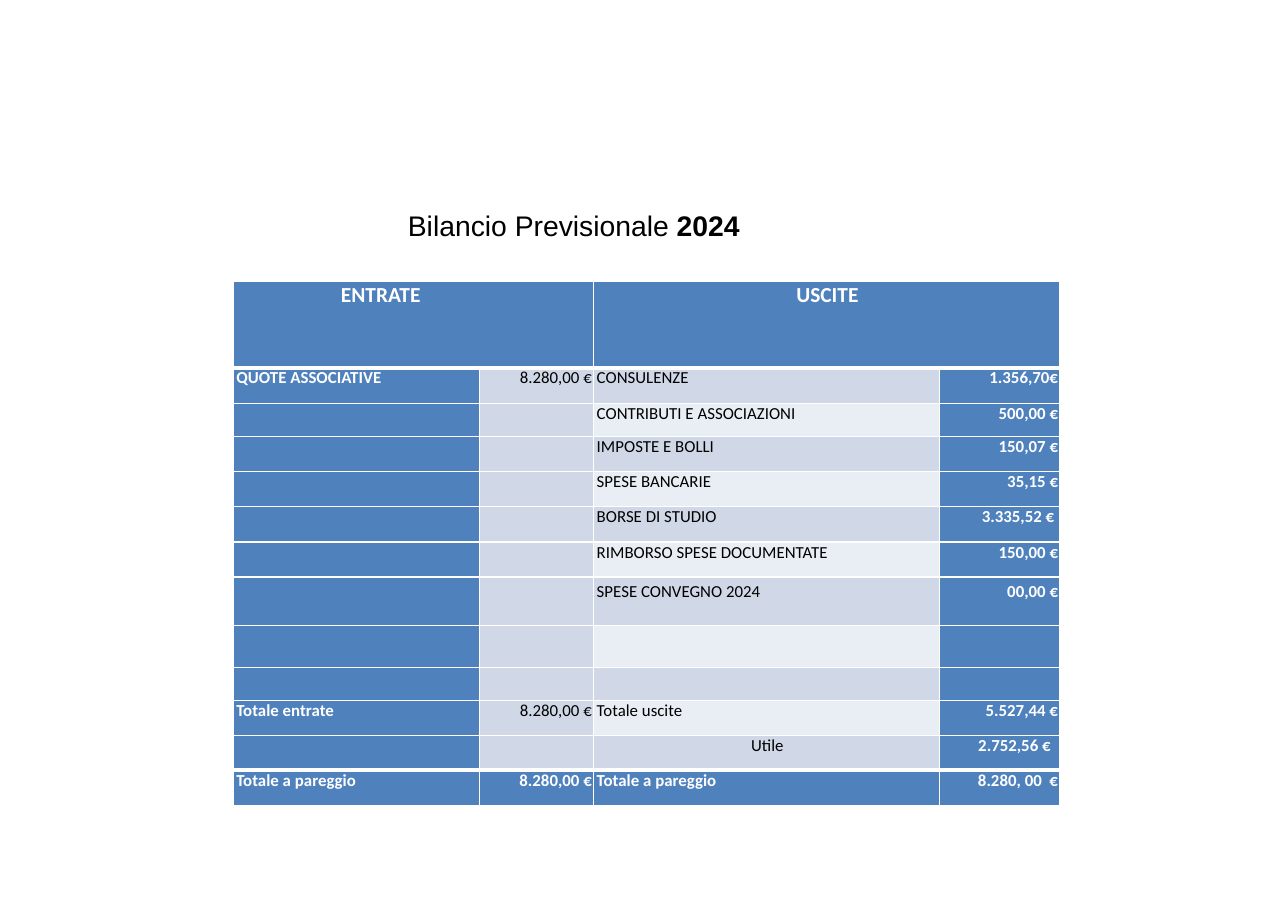
from lxml.etree import SubElement
from pptx import Presentation
from pptx.dml.color import RGBColor
from pptx.enum.text import MSO_ANCHOR, PP_ALIGN
from pptx.oxml.ns import qn
from pptx.util import Cm, Pt

BLUE, PALE, LIGHT, WHITE, BLACK = "4F81BD", "D0D8E8", "E9EDF4", "FFFFFF", "000000"


def write(para, text, size=11, font="Calibri", color=BLACK, bold=False, align=PP_ALIGN.LEFT):
    para.alignment = align
    span = para.add_run()
    span.text = text
    span.font.size = Pt(size)
    span.font.name = font
    span.font.bold = bold
    span.font.color.rgb = RGBColor.from_string(color)


def add_border(cell, side, width):
    line = SubElement(cell._tc.get_or_add_tcPr(), qn(f"a:ln{side}"), w=str(Pt(width)))
    fill = SubElement(line, qn("a:solidFill"))
    SubElement(fill, qn("a:srgbClr"), val=WHITE)


deck = Presentation()
deck.slide_width, deck.slide_height = Cm(29.7), Cm(20.99)
page = deck.slides.add_slide(deck.slide_layouts[5])

title = page.shapes.title
title.left, title.top, title.width, title.height = Cm(8.08), Cm(4.8), Cm(10.3), Cm(0.81)
frame = title.text_frame
frame.margin_left = frame.margin_right = frame.margin_top = frame.margin_bottom = 0
frame.vertical_anchor = MSO_ANCHOR.TOP
for text, bold in [("Bilancio Previsionale ", False), ("2024", True)]:
    write(frame.paragraphs[0], text, size=18.5, font="Arial", bold=bold, align=PP_ALIGN.CENTER)

rows = [
    ("ENTRATE", "", "USCITE", ""),
    ("QUOTE ASSOCIATIVE", "8.280,00 €", "CONSULENZE", "1.356,70€"),
    ("", "", "CONTRIBUTI E ASSOCIAZIONI", "500,00 €"),
    ("", "", "IMPOSTE E BOLLI", "150,07 €"),
    ("", "", "SPESE BANCARIE", "35,15 €"),
    ("", "", "BORSE DI STUDIO", "3.335,52 € "),
    ("", "", "RIMBORSO SPESE DOCUMENTATE", "150,00 €"),
    ("", "", "SPESE CONVEGNO 2024", "00,00 €"),
    ("", "", "", ""),
    ("", "", "", ""),
    ("Totale entrate", "8.280,00 €", "Totale uscite", "5.527,44 €"),
    ("", "", "Utile", "2.752,56 €"),
    ("Totale a pareggio", "8.280,00 €", "Totale a pareggio", "8.280, 00  €"),
]
widths = [5.69, 2.54, 7.98, 2.77]
heights = [2, 0.82, 0.77, 0.8, 0.81, 0.82, 0.81, 1.11, 0.97, 0.76, 0.81, 0.81, 0.81]
last = len(rows) - 1

holder = page.shapes.add_table(len(rows), len(widths), Cm(5.37), Cm(6.48),
                               Cm(sum(widths)), Cm(sum(heights)))
budget = holder.table
budget.first_row = budget.horz_banding = False
for column, width in zip(budget.columns, widths):
    column.width = Cm(width)
for row, height in zip(budget.rows, heights):
    row.height = Cm(height)

for r, texts in enumerate(rows):
    for c, text in enumerate(texts):
        cell = budget.cell(r, c)
        strong = r in (0, last) or c in (0, 3)
        for side in "LRTB":
            thick = (side, r) in [("B", 0), ("T", 1), ("B", last - 1), ("T", last)]
            add_border(cell, side, 3 if thick else 1)
        cell.fill.solid()
        shade = BLUE if strong else LIGHT if c == 2 and r % 2 == 0 else PALE
        cell.fill.fore_color.rgb = RGBColor.from_string(shade)
        cell.margin_left, cell.margin_right = Cm(0.08), Cm(0.03)
        cell.margin_top, cell.margin_bottom = Cm(0.03), 0
        para = cell.text_frame.paragraphs[0]
        if r:
            para.line_spacing = Pt(12.7)
        centred = text in ("USCITE", "Utile")
        align = PP_ALIGN.CENTER if centred else PP_ALIGN.RIGHT if c in (1, 3) else PP_ALIGN.LEFT
        write(para, text, size=11 if r else 14, color=WHITE if strong else BLACK,
              bold=strong, align=align)

for c in (0, 2):
    budget.cell(0, c).merge(budget.cell(0, c + 1))
budget.cell(0, 0).margin_left = Cm(2.49)
budget.cell(last - 1, 3).margin_right = Cm(0.2)
for c in (2, 3):
    budget.cell(7, c).margin_top = Cm(0.12)

deck.save("out.pptx")
